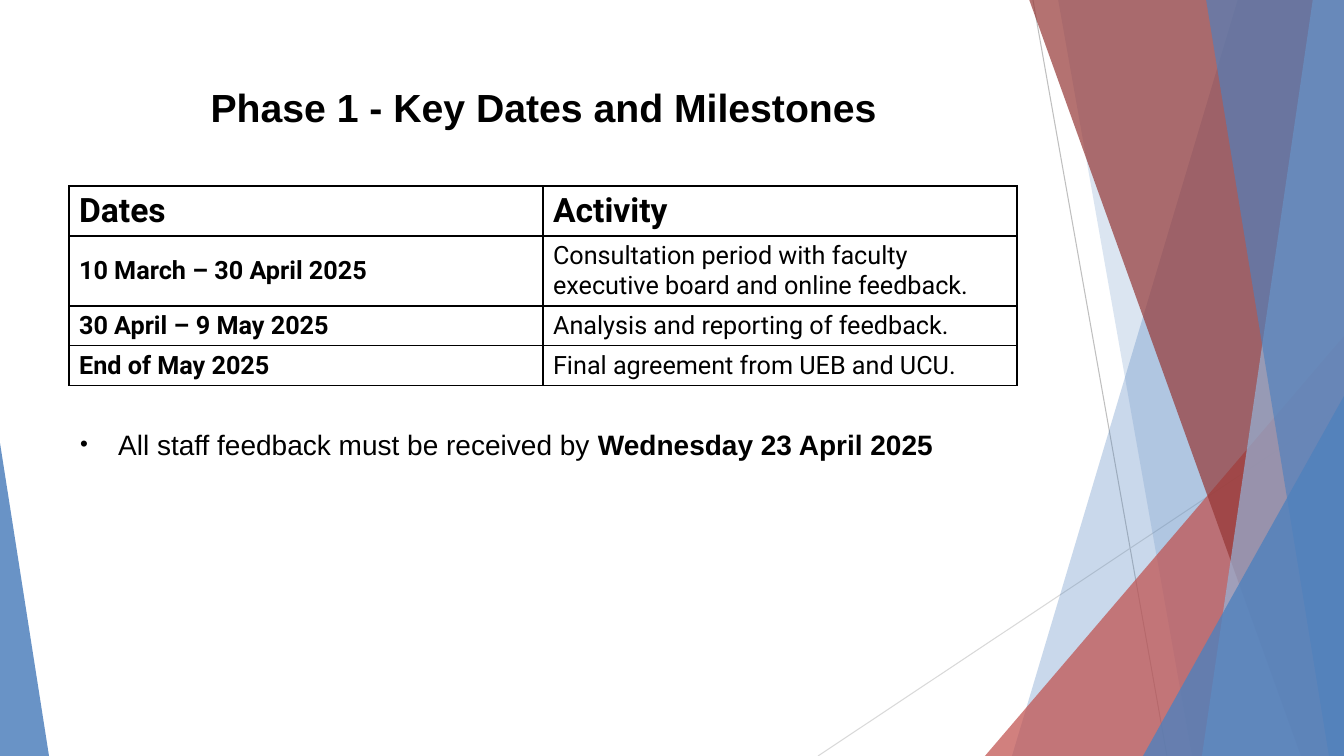
import pptx
import pptx.util
import pptx.dml.color
import pptx.enum.shapes
import pptx.enum.text
import pptx.oxml
import pptx.oxml.ns
import lxml.etree

PX = 914400 / 100.8
WIDTH, HEIGHT = 1344, 756
THEME = {
    "black": "000000", "blue": "4F81BD", "pale_blue": "95B3D7",
    "red": "C0504D", "dark_red": "953735", "grey": "BFBFBF", "pale_grey": "D9D9D9",
    "heading_font": "Arial", "table_font": "Roboto",
    "title_size": 28, "header_size": 24, "cell_size": 18, "body_size": 20,
}


def emu(*lengths):
    return [pptx.util.Emu(round(length * PX)) for length in lengths]


def style(font, name, size, bold):
    values = {"name": name, "size": pptx.util.Pt(size), "bold": bold}
    for key, value in values.items():
        setattr(font, key, value)
    font.color.rgb = pptx.dml.color.RGBColor.from_string(THEME["black"])


deck = pptx.Presentation()
deck.slide_width, deck.slide_height = emu(WIDTH, HEIGHT)
page = deck.slides.add_slide(deck.slide_layouts[1])
qn = pptx.oxml.ns.qn

lines = [((1033, 0, 1167, HEIGHT), "grey"), ((WIDTH, 406, 818, HEIGHT), "pale_grey")]
for ends, color in lines:
    line = page.shapes.add_connector(pptx.enum.shapes.MSO_CONNECTOR.STRAIGHT, *emu(*ends))
    line.line.color.rgb = pptx.dml.color.RGBColor.from_string(THEME[color])
    line.line.width = pptx.util.Pt(0.75)
    lxml.etree.SubElement(line._element.spPr, qn("a:effectLst"))

facets = [
    ("band", (1238, 1012), "blue", 30),
    ("band", (1058, 1192), "blue", 20),
    ("triangle", (985, 336, 359, 420, 1), "red", 72),
    ("band", (1029, 1301), "dark_red", 70),
    ("band", (1313, 1202), "pale_blue", 70),
    ("band", (1206, 1329), "blue", 65),
    ("triangle", (1143, 396, 201, 360, 1), "blue", 80),
    ("triangle", (0, 443, 49, 313, 0), "blue", 85),
]
for kind, geometry, color, opacity in facets:
    if kind == "band":
        top, bottom = geometry
        outline = page.shapes.build_freeform(top, -1, scale=PX)
        outline.add_line_segments([(WIDTH, -1), (WIDTH, HEIGHT), (bottom, HEIGHT)], close=True)
        facet = outline.convert_to_shape()
    else:
        *frame, apex = geometry
        facet = page.shapes.add_shape(
            pptx.enum.shapes.MSO_SHAPE.ISOSCELES_TRIANGLE, *emu(*frame))
        facet.adjustments[0] = apex
    facet.shadow.inherit = False
    facet.line.fill.background()
    facet.fill.solid()
    facet.fill.fore_color.rgb = pptx.dml.color.RGBColor.from_string(THEME[color])
    tint = facet._element.spPr.find(qn("a:solidFill"))[0]
    lxml.etree.SubElement(tint, qn("a:alpha"), val=str(opacity * 1000))

title = page.shapes.title
body = page.placeholders[1]
boxes = [
    (title, (83, 40, 921, 95), pptx.enum.text.MSO_ANCHOR.BOTTOM),
    (body, (70, 422, 930, 64), pptx.enum.text.MSO_ANCHOR.TOP),
]
for box, frame, anchor in boxes:
    box.left, box.top, box.width, box.height = emu(*frame)
    box.text_frame.word_wrap = True
    box.text_frame.auto_size = pptx.enum.text.MSO_AUTO_SIZE.NONE
    box.text_frame.vertical_anchor = anchor

title.text_frame.text = "Phase 1 - Key Dates and Milestones"
para = title.text_frame.paragraphs[0]
para.alignment = pptx.enum.text.PP_ALIGN.CENTER
style(para.runs[0].font, THEME["heading_font"], THEME["title_size"], True)

para = body.text_frame.paragraphs[0]
properties = para._p.get_or_add_pPr()
indent = emu(38)[0]
properties.set("marL", str(indent))
properties.set("indent", str(-indent))
lxml.etree.SubElement(properties, qn("a:buSzPct"), val="80000")
lxml.etree.SubElement(properties, qn("a:buFont"), typeface=THEME["heading_font"])
lxml.etree.SubElement(properties, qn("a:buChar"), char="•")
para.space_before = pptx.util.Pt(0)
for text, bold in [("All staff feedback must be received by ", False),
                   ("Wednesday 23 April 2025", True)]:
    span = para.add_run()
    span.text = text
    style(span.font, THEME["heading_font"], THEME["body_size"], bold)

milestones = [
    ("Dates", "Activity"),
    ("10 March – 30 April 2025",
     "Consultation period with faculty executive board and online feedback."),
    ("30 April – 9 May 2025", "Analysis and reporting of feedback."),
    ("End of May 2025", "Final agreement from UEB and UCU."),
]
row_heights = [50, 70, 39, 40]
table = page.shapes.add_table(
    len(milestones), 2, *emu(69, 186, 948, sum(row_heights))).table
table.first_row = table.horz_banding = False
for column in table.columns:
    column.width = emu(474)[0]
for row_index, texts in enumerate(milestones):
    table.rows[row_index].height = emu(row_heights[row_index])[0]
    header = row_index == 0
    for column_index, text in enumerate(texts):
        cell = table.cell(row_index, column_index)
        cell.text = text
        cell.vertical_anchor = pptx.enum.text.MSO_ANCHOR.MIDDLE
        style(cell.text_frame.paragraphs[0].runs[0].font, THEME["table_font"],
              THEME["header_size" if header else "cell_size"], header or column_index == 0)
        cell.fill.background()
        cell_properties = cell._tc.get_or_add_tcPr()
        for position, side in enumerate(["lnL", "lnR", "lnT", "lnB"]):
            border = lxml.etree.Element(qn("a:" + side), w=str(pptx.util.Pt(1)))
            paint = lxml.etree.SubElement(border, qn("a:solidFill"))
            lxml.etree.SubElement(paint, qn("a:srgbClr"), val=THEME["black"])
            cell_properties.insert(position, border)

deck.save("out.pptx")
